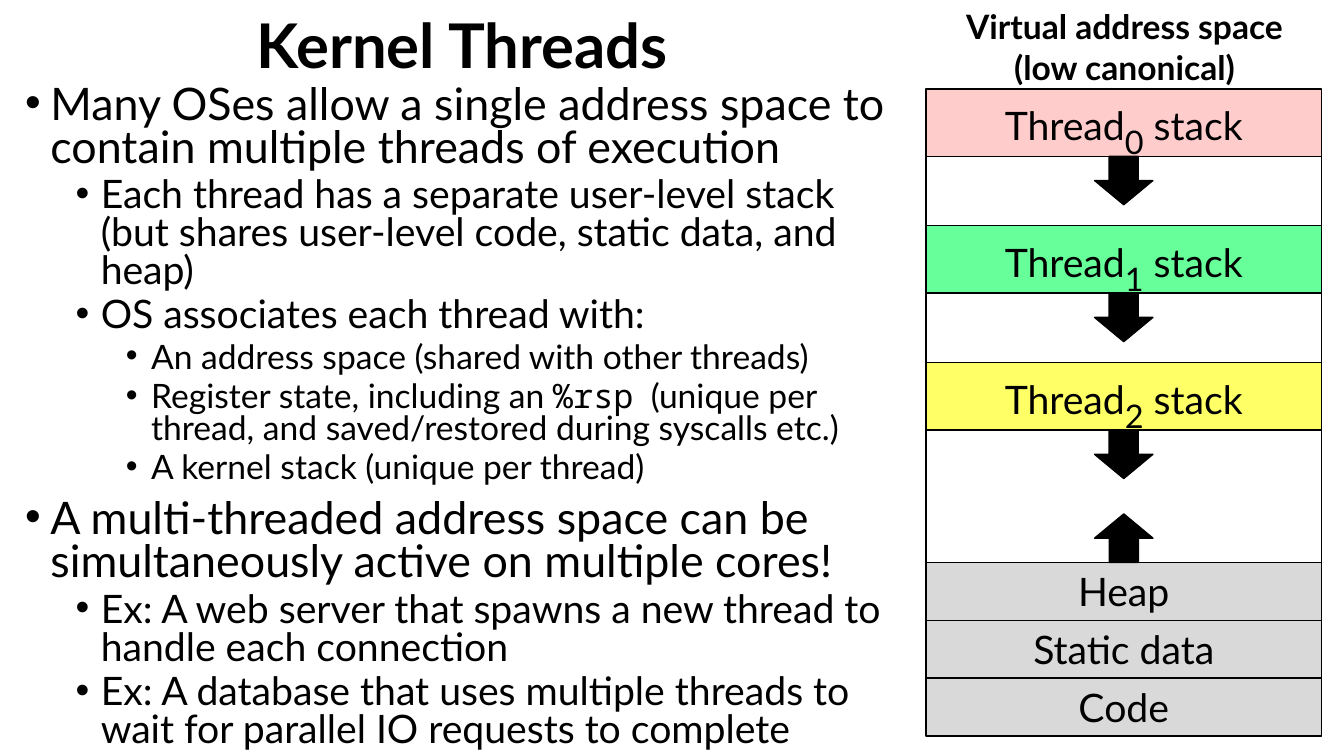
"""Build the kernel threads slide with its address space diagram."""
from dataclasses import dataclass

from lxml import etree
from pptx import Presentation
from pptx.dml.color import RGBColor
from pptx.enum.shapes import MSO_SHAPE
from pptx.enum.text import MSO_ANCHOR, MSO_AUTO_SIZE, PP_ALIGN
from pptx.oxml.ns import qn
from pptx.util import Cm, Pt

RECTANGLE = MSO_SHAPE.RECTANGLE
DOWN_ARROW = MSO_SHAPE.DOWN_ARROW
MIDDLE = MSO_ANCHOR.MIDDLE
CENTER = PP_ALIGN.CENTER
FIXED = MSO_AUTO_SIZE.NONE
GROW = MSO_AUTO_SIZE.SHAPE_TO_FIT_TEXT


@dataclass(frozen=True)
class Theme:
    """Fonts, colours and type sizes of the slide."""
    font: str = "Lato"
    code_font: str = "Noto Sans Mono"
    ink: str = "000000"
    segment: str = "D9D9D9"
    stacks: tuple = ("FFCCCC", "66FF99", "FFFF66")
    title: int = 44
    levels: tuple = (32, 28, 24)
    label: int = 28
    subscript: int = 40
    heading: int = 24


THEME = Theme()

BULLETS = [
    (0, ["Many OSes allow a single address space to contain multiple threads of execution"]),
    (1, ["Each thread has a separate user-level stack "
         "(but shares user-level code, static data, and heap)"]),
    (1, ["OS associates each thread with:"]),
    (2, ["An address space (shared with other threads)"]),
    (2, ["Register state, including an ", "%rsp",
         "  (unique per thread, and saved/restored during syscalls etc.)"]),
    (2, ["A kernel stack (unique per thread)"]),
    (0, ["A multi-threaded address space can be simultaneously active on multiple cores!"]),
    (1, ["Ex: A web server that spawns a new thread to handle each connection"]),
    (1, ["Ex: A database that uses multiple threads to wait for parallel IO requests to complete"]),
]
SEGMENTS = ["Heap", "Static data", "Code"]

COLUMN_LEFT, COLUMN_WIDTH = 23.34, 9.96
STACK_TOP, STACK_HEIGHT, STACK_GAP = 2.24, 1.7, 1.75
HEAP_TOP, SEGMENT_HEIGHT = 14.17, 1.46
ARROW_WIDTH, ARROW_HEIGHT = 1.47, 1.22


def add_span(para, text, size, font=THEME.font, bold=False):
    """Add one formatted run to a paragraph."""
    span = para.add_run()
    span.text = text
    span.font.name = font
    span.font.size = Pt(size)
    span.font.bold = bold
    span.font.color.rgb = RGBColor.from_string(THEME.ink)
    return span


def place(box, left, top, width, height):
    """Move and size a box given in centimetres."""
    box.left, box.top, box.width, box.height = map(Cm, (left, top, width, height))


def set_bullet(para, level):
    """Give a paragraph its hanging indent and round bullet."""
    para.level = level
    properties = para._p.get_or_add_pPr()
    properties.set("marL", str(Cm(0.635 + 1.27 * level)))
    properties.set("indent", str(Cm(-0.635)))
    etree.SubElement(properties, qn("a:buFont")).set("typeface", "Arial")
    etree.SubElement(properties, qn("a:buChar")).set("char", "•")


def fill_title(box, text):
    """Place and format the title."""
    place(box, 0.56, 0.05, 22.17, 2.36)
    frame = box.text_frame
    frame.auto_size = FIXED
    frame.vertical_anchor = MIDDLE
    para = frame.paragraphs[0]
    para.alignment = CENTER
    para.line_spacing = 0.9
    add_span(para, text, THEME.title, bold=True)


def fill_body(box, bullets):
    """Place the body and write its bullet list."""
    place(box, 0.38, 2.03, 22.35, 17.65)
    frame = box.text_frame
    frame.auto_size = FIXED
    for index, (level, texts) in enumerate(bullets):
        para = frame.add_paragraph() if index else frame.paragraphs[0]
        para.line_spacing = 0.8
        para.space_before = Pt(5 if level else 10)
        set_bullet(para, level)
        for text in texts:
            font = THEME.code_font if text.startswith("%") else THEME.font
            add_span(para, text, THEME.levels[level], font)


def add_block(shapes, kind, left, top, width, height, fill=None):
    """Add an outlined shape, hollow unless a fill is given."""
    block = shapes.add_shape(kind, Cm(left), Cm(top), Cm(width), Cm(height))
    block.shadow.inherit = False
    if fill:
        block.fill.solid()
        block.fill.fore_color.rgb = RGBColor.from_string(fill)
    else:
        block.fill.background()
    block.line.color.rgb = RGBColor.from_string(THEME.ink)
    block.line.width = Pt(1)
    return block


def add_region(shapes, top, height, fill=None):
    """Add one full-width region of the address space."""
    return add_block(shapes, RECTANGLE, COLUMN_LEFT, top, COLUMN_WIDTH, height, fill)


def add_label(block, text, subscript="", ending=""):
    """Centre a label, with an optional subscript, in a region."""
    frame = block.text_frame
    frame.vertical_anchor = MIDDLE
    para = frame.paragraphs[0]
    para.alignment = CENTER
    add_span(para, text, THEME.label)
    if subscript:
        span = add_span(para, subscript, THEME.subscript)
        span._r.get_or_add_rPr().set("baseline", "-25000")
        add_span(para, ending, THEME.label)


def add_growth_arrow(shapes, top, rotation=0):
    """Add a growth arrow on the column's centre line."""
    left = COLUMN_LEFT + (COLUMN_WIDTH - ARROW_WIDTH) / 2
    arrow = add_block(shapes, DOWN_ARROW, left, top, ARROW_WIDTH, ARROW_HEIGHT, THEME.ink)
    arrow.rotation = rotation


def add_address_space(page):
    """Draw the thread stacks, free space and shared segments."""
    shapes = page.shapes.add_group_shape().shapes
    for index, name in enumerate(SEGMENTS):
        top = HEAP_TOP + index * SEGMENT_HEIGHT
        add_label(add_region(shapes, top, SEGMENT_HEIGHT, THEME.segment), name)
    add_growth_arrow(shapes, HEAP_TOP - ARROW_HEIGHT, 180)
    last = len(THEME.stacks) - 1
    for index, fill in enumerate(THEME.stacks):
        top = STACK_TOP + index * (STACK_HEIGHT + STACK_GAP)
        bottom = top + STACK_HEIGHT
        stack = add_region(shapes, top, STACK_HEIGHT, fill)
        add_label(stack, "Thread", str(index), " stack")
        add_growth_arrow(shapes, bottom)
        add_region(shapes, bottom, HEAP_TOP - bottom if index == last else STACK_GAP)


def add_heading(page, lines):
    """Add the bold heading above the address space."""
    box = page.shapes.add_textbox(Cm(22.28), Cm(0.03), Cm(12.12), Cm(2.31))
    frame = box.text_frame
    frame.word_wrap = True
    frame.auto_size = GROW
    for index, line in enumerate(lines):
        para = frame.add_paragraph() if index else frame.paragraphs[0]
        para.alignment = CENTER
        add_span(para, line, THEME.heading, bold=True)


def main():
    """Build and save the deck."""
    deck = Presentation()
    deck.slide_width, deck.slide_height = Cm(33.87), Cm(19.05)
    page = deck.slides.add_slide(deck.slide_layouts[1])
    fill_title(page.shapes.title, "Kernel Threads")
    fill_body(page.placeholders[1], BULLETS)
    add_address_space(page)
    add_heading(page, ["Virtual address space", "(low canonical)"])
    deck.save("out.pptx")


if __name__ == "__main__":
    main()
